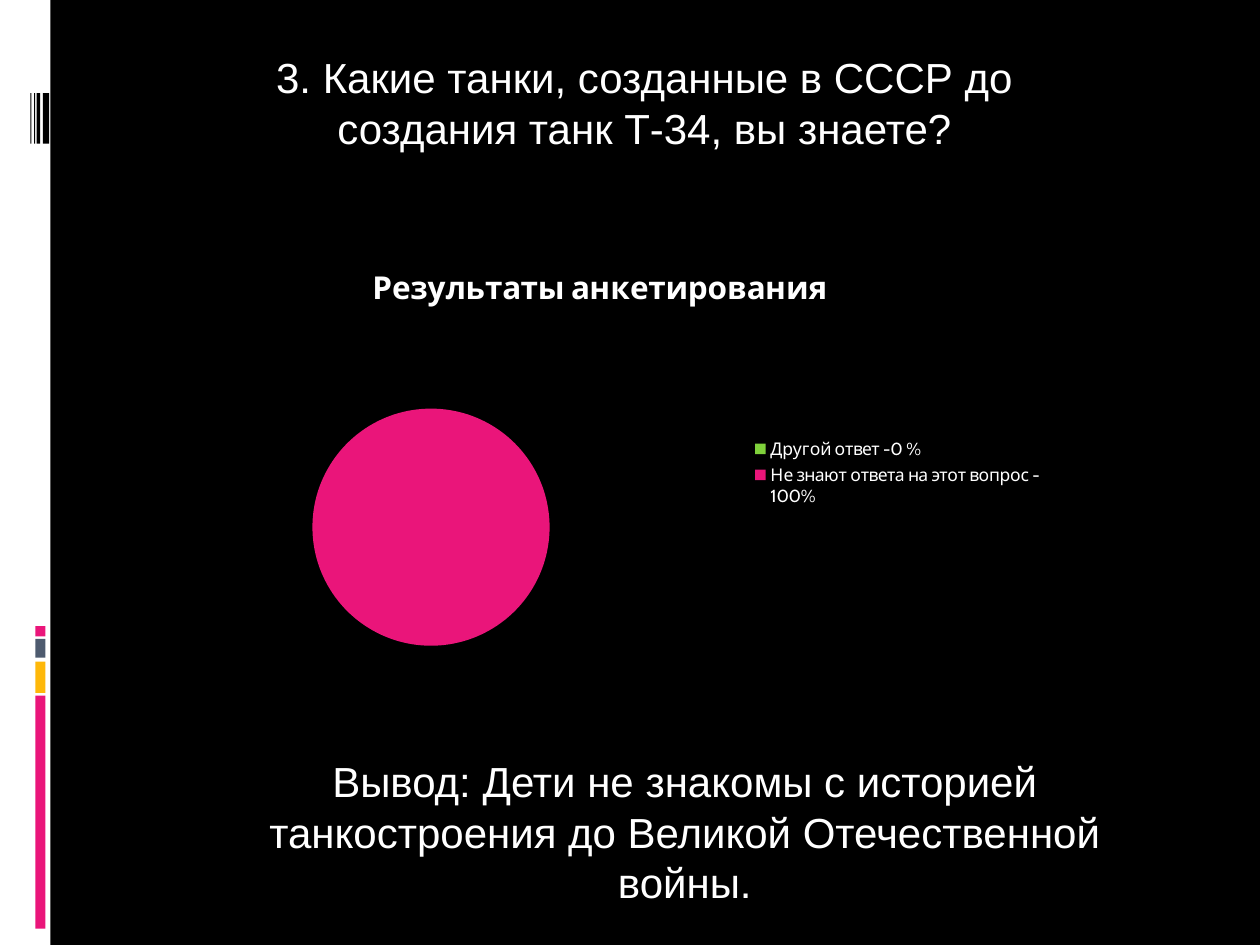
from dataclasses import dataclass

from lxml.etree import SubElement
from pptx import Presentation
from pptx.chart.data import CategoryChartData
from pptx.dml.color import RGBColor
from pptx.enum.chart import XL_CHART_TYPE, XL_LEGEND_POSITION
from pptx.enum.shapes import MSO_SHAPE
from pptx.enum.text import MSO_ANCHOR, MSO_AUTO_SIZE, PP_ALIGN
from pptx.oxml.ns import qn
from pptx.util import Inches, Pt


@dataclass(frozen=True)
class Theme:
    black: str = "000000"
    white: str = "FFFFFF"
    pink: str = "EA157A"
    amber: str = "FEB80A"
    slate: str = "4E5B6F"
    green: str = "7FD13B"
    text_font: str = "Arial"
    chart_font: str = "Cabin"
    text_size: int = 24
    chart_title_size: int = 18
    legend_size: int = 10


THEME = Theme()
WIDTH, HEIGHT = Inches(10), Inches(7.5)
COLS, ROWS = 1000, 750


def grid(col, row, cols, rows):
    cw, rh = WIDTH / COLS, HEIGHT / ROWS
    return [round(v) for v in (col * cw, row * rh, cols * cw, rows * rh)]


def paint(fill, color):
    fill.solid()
    fill.fore_color.rgb = RGBColor.from_string(color)


def style_font(font, name, size, bold=False):
    font.name = name
    font.size = Pt(size)
    font.bold = bold
    font.color.rgb = RGBColor.from_string(THEME.white)


def add_bar(s, cell, color):
    sp = s.shapes.add_shape(MSO_SHAPE.RECTANGLE, *grid(*cell))
    sp.shadow.inherit = False
    paint(sp.fill, color)
    sp.line.fill.background()


def add_side_strip(s):
    add_bar(s, (0, 0, 40, ROWS), THEME.white)
    for row, rows, color in (
        (552, 185, THEME.pink),
        (525, 25, THEME.amber),
        (507, 15, THEME.slate),
        (497, 8, THEME.pink),
    ):
        add_bar(s, (28, row, 8, rows), color)
    for col, cols in ((34, 5), (29, 3), (27, 1), (24, 1)):
        add_bar(s, (col, 74, cols, 40), THEME.black)


def write_text(sp, cell, text):
    sp.left, sp.top, sp.width, sp.height = grid(*cell)
    tf = sp.text_frame
    tf.word_wrap = True
    tf.auto_size = MSO_AUTO_SIZE.NONE
    tf.vertical_anchor = MSO_ANCHOR.TOP
    p = tf.paragraphs[0]
    p.alignment = PP_ALIGN.CENTER
    r = p.add_run()
    r.text = text
    style_font(r.font, THEME.text_font, THEME.text_size)


def place_plot(chart, x, y, w, h):
    area = chart.plots[0]._element.getparent()
    layout = area.find(qn("c:layout"))
    if layout is None:
        layout = SubElement(area, qn("c:layout"))
        area.insert(0, layout)
    manual = SubElement(layout, qn("c:manualLayout"))
    for tag, val in (
        ("layoutTarget", "inner"),
        ("xMode", "edge"),
        ("yMode", "edge"),
        ("x", x),
        ("y", y),
        ("w", w),
        ("h", h),
    ):
        SubElement(manual, qn(f"c:{tag}")).set("val", str(val))


def add_pie(s, cell, title, answers):
    data = CategoryChartData()
    data.categories = [name for name, _, _ in answers]
    data.add_series("Series 1", [value for _, value, _ in answers])
    chart = s.shapes.add_chart(XL_CHART_TYPE.PIE, *grid(*cell), data).chart
    style_font(chart.font, THEME.chart_font, THEME.legend_size)

    chart.has_title = True
    r = chart.chart_title.text_frame.paragraphs[0].add_run()
    r.text = title
    style_font(r.font, THEME.chart_font, THEME.chart_title_size, bold=True)

    chart.has_legend = True
    chart.legend.position = XL_LEGEND_POSITION.RIGHT
    chart.legend.include_in_layout = False
    style_font(chart.legend.font, THEME.chart_font, THEME.legend_size)

    plot = chart.plots[0]
    plot.vary_by_categories = True
    for i, (_, _, color) in enumerate(answers):
        point = plot.series[0].points[i]
        paint(point.format.fill, color)
        point.format.line.fill.background()
    place_plot(chart, 0.08, 0.36, 0.47, 0.52)


def main():
    prs = Presentation()
    prs.slide_width, prs.slide_height = WIDTH, HEIGHT
    s = prs.slides.add_slide(prs.slide_layouts[5])
    paint(s.background.fill, THEME.black)
    add_side_strip(s)
    write_text(
        s.shapes.title,
        (161, 36, 701, 121),
        "3. Какие танки, созданные в СССР до создания танк Т-34, вы знаете?",
    )
    conclusion = (185, 595, 717, 162)
    write_text(
        s.shapes.add_textbox(*grid(*conclusion)),
        conclusion,
        "Вывод: Дети не знакомы с историей танкостроения до Великой Отечественной войны.",
    )
    add_pie(
        s,
        (114, 194, 724, 362),
        "Результаты анкетирования",
        (
            ("Другой ответ -0 % ", 0, THEME.green),
            ("Не знают ответа на этот вопрос - 100%", 100, THEME.pink),
        ),
    )
    prs.save("out.pptx")


if __name__ == "__main__":
    main()
